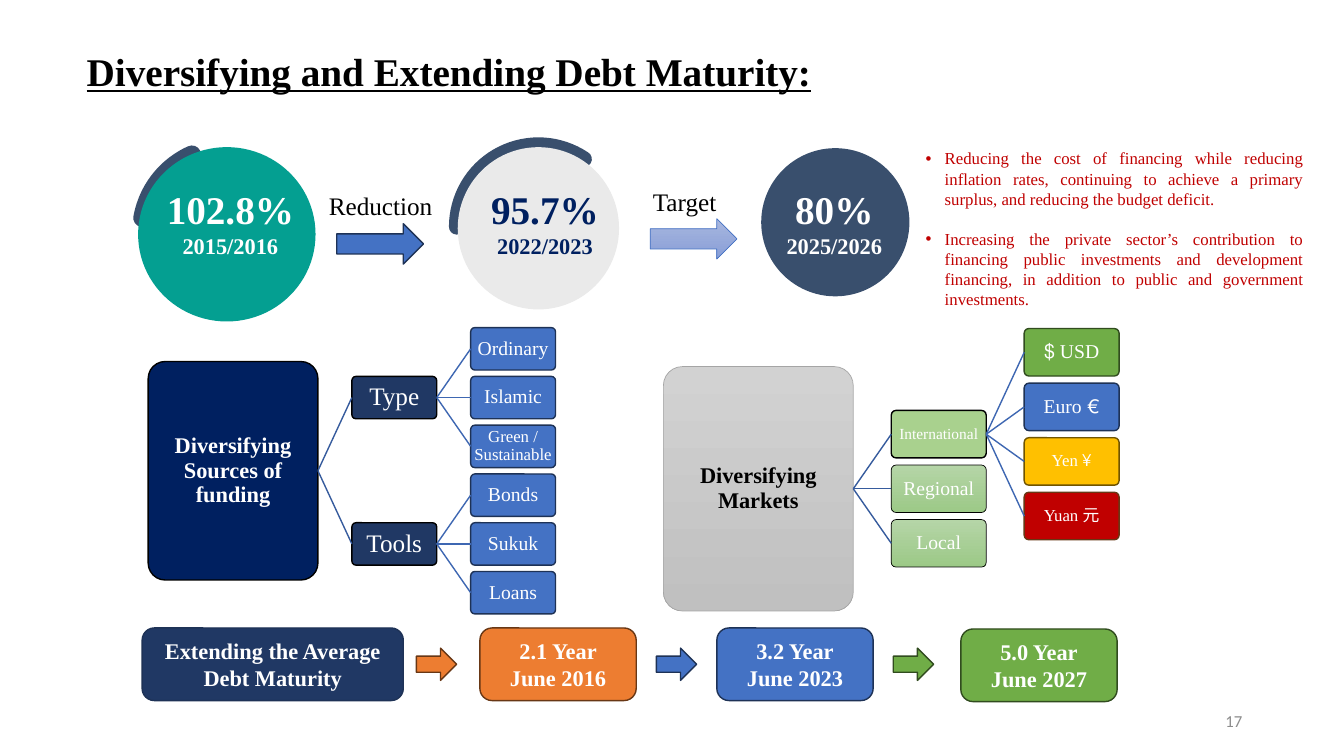
from dataclasses import dataclass

from lxml import etree
from pptx import Presentation
from pptx import util as u
from pptx.dml import color
from pptx.enum import shapes, text
from pptx.oxml import ns

COLUMNS, ROWS = 133.3, 75
WIDTH, HEIGHT = u.Inches(13.33), u.Inches(7.5)
PRESET, ALIGN, ANCHOR = shapes.MSO_SHAPE, text.PP_ALIGN, text.MSO_ANCHOR


@dataclass(frozen=True)
class Theme:
    font: str = "Times New Roman"
    number_font: str = "Calibri"
    black: str = "000000"
    white: str = "FFFFFF"
    navy: str = "002060"
    dark_blue: str = "203864"
    slate: str = "394F6D"
    teal: str = "049F91"
    pale: str = "EAEAEA"
    blue: str = "4472C4"
    blue_edge: str = "1E3256"
    orange: str = "ED7D31"
    brown_edge: str = "683715"
    green: str = "70AD47"
    green_edge: str = "314C1F"
    light_green: str = "A9D18E"
    yellow: str = "FFC000"
    yellow_edge: str = "705400"
    red: str = "C00000"
    gray: str = "8C8C8C"
    gray_edge: str = "A5A5A5"
    root_link: str = "365B9D"
    leaf_link: str = "3E67B2"
    blue_fade: tuple = ("A8B7DF", "889ED7")
    gray_fade: tuple = ("D2D2D2", "C0C0C0")
    green_fade: tuple = ("B5D5A7", "9CC987")
    headline: int = 28
    large: int = 18
    medium: int = 16
    normal: int = 14
    small: int = 12
    tiny: int = 11


T = Theme()


@dataclass(frozen=True)
class Box:
    left: float
    top: float
    width: float
    height: float

    def emu(self):
        return (round(self.left * WIDTH / COLUMNS), round(self.top * HEIGHT / ROWS),
                round(self.width * WIDTH / COLUMNS), round(self.height * HEIGHT / ROWS))

    def inner(self, left, top, width, height):
        return Box(self.left + left, self.top + top, width, height)


def rgb(value):
    return color.RGBColor.from_string(value)


def write(shape, *lines, size=T.medium, ink=T.white, bold=False, underline=False, font=T.font,
          align=ALIGN.CENTER, anchor=ANCHOR.MIDDLE, inset=None, spacing=1.0, gap=0, rtl=False):
    frame = shape.text_frame
    frame.word_wrap = True
    frame.auto_size = text.MSO_AUTO_SIZE.NONE
    frame.vertical_anchor = anchor
    if inset is not None:
        frame.margin_left = frame.margin_right = u.Inches(inset)
        frame.margin_top = frame.margin_bottom = u.Inches(inset)
    sizes = size if isinstance(size, tuple) else (size,) * len(lines)
    for index, (line, points) in enumerate(zip(lines, sizes)):
        paragraph = frame.paragraphs[0] if index == 0 else frame.add_paragraph()
        paragraph.alignment = align
        paragraph.line_spacing = spacing
        paragraph.space_before = u.Pt(gap if index else 0)
        if rtl:
            paragraph._p.get_or_add_pPr().set("rtl", "1")
        run = paragraph.add_run()
        run.text = line
        run.font.name, run.font.size = font, u.Pt(points)
        run.font.bold, run.font.underline = bold, underline
        run.font.color.rgb = rgb(ink)


def draw(slide, preset, box, fill=None, edge=None, weight=1):
    shape = slide.shapes.add_shape(preset, *box.emu())
    shape.shadow.inherit = False
    if fill is None:
        shape.fill.background()
    elif isinstance(fill, tuple):
        shape.fill.gradient()
        shape.fill.gradient_angle = 270
        for stop, value, position in zip(shape.fill.gradient_stops, fill, (0, 1)):
            stop.color.rgb, stop.position = rgb(value), position
    else:
        shape.fill.solid()
        shape.fill.fore_color.rgb = rgb(fill)
    if edge:
        shape.line.color.rgb, shape.line.width = rgb(edge), u.Pt(weight)
    else:
        shape.line.fill.background()
    return shape


def label(slide, box, *lines, **style):
    write(slide.shapes.add_textbox(*box.emu()), *lines, **style)


def place(shape, box):
    shape.left, shape.top, shape.width, shape.height = box.emu()
    return shape


def heading(slide, box):
    write(place(slide.shapes.title, box), "Diversifying and Extending Debt Maturity:",
          size=T.headline, ink=T.black, bold=True, underline=True, align=ALIGN.LEFT, spacing=0.9)


def goals(slide, box):
    body = place(slide.placeholders[1], box)
    write(body,
          "Reducing the cost of financing while reducing inflation rates, continuing to achieve "
          "a primary surplus, and reducing the budget deficit.",
          "Increasing the private sector’s contribution to financing public investments and "
          "development financing, in addition to public and government investments.",
          size=T.small, ink=T.red, align=ALIGN.JUSTIFY, anchor=ANCHOR.TOP, gap=14)
    for paragraph in body.text_frame.paragraphs:
        properties = paragraph._p.get_or_add_pPr()
        properties.set("marL", str(u.Inches(0.19)))
        properties.set("indent", str(-u.Inches(0.19)))
        etree.SubElement(properties, ns.qn("a:buFont")).set("typeface", "Arial")
        etree.SubElement(properties, ns.qn("a:buChar")).set("char", "•")


def arc(slide, box, start, end, weight):
    shape = draw(slide, PRESET.ARC, box, edge=T.slate, weight=weight)
    shape.adjustments[0], shape.adjustments[1] = start * 0.6, end * 0.6
    shape.line._get_or_add_ln().set("cap", "rnd")


def debt_ratios(slide, box):
    arc(slide, box.inner(0.3, 0.3, 17, 17), 190, 246, 12.97)
    arc(slide, box.inner(31.6, 0.1, 16.2, 16.2), 180, 304, 11.14)
    ratios = [
        (0, 0.3, 17.6, 17.3, T.teal, 1.9, "102.8%", "2015/2016", T.white),
        (31.7, 0.3, 16, 16.1, T.pale, 33.1, "95.7%", "2022/2023", T.navy),
        (61.8, 0.4, 14.7, 14.7, T.slate, 61.8, "80%", "2025/2026", T.white),
    ]
    for left, top, width, height, fill, text_left, ratio, year, ink in ratios:
        draw(slide, PRESET.OVAL, box.inner(left, top, width, height), fill)
        label(slide, box.inner(text_left, 4.1, 14.5, 11), ratio, year, bold=True, ink=ink,
              size=(T.headline, T.medium), inset=0, anchor=ANCHOR.TOP)
    steps = [
        ("Reduction", 17.8, 4.1, 12.5, 19.7, 7.9, T.blue, T.blue_edge, 1),
        ("Target", 49, 3.7, 10.4, 50.8, 7.4, T.blue_fade, T.blue, 0.5),
    ]
    for name, left, top, width, arrow_left, arrow_top, fill, edge, weight in steps:
        draw(slide, PRESET.RIGHT_ARROW, box.inner(arrow_left, arrow_top, 8.6, 4), fill, edge, weight)
        label(slide, box.inner(left, top, width, 4), name, size=T.large, ink=T.black)


def link(slide, parent, child, ink):
    connector = slide.shapes.add_connector(shapes.MSO_CONNECTOR.STRAIGHT, 0, 0, 0, 0)
    connector.begin_connect(parent, 3)
    connector.end_connect(child, 1)
    connector.line.color.rgb, connector.line.width = rgb(ink), u.Pt(1)
    etree.SubElement(connector._element.spPr, ns.qn("a:effectLst"))


def tree(slide, box, root, branches):
    unit = box.width / 4.8

    def node(column, row, content, width=1, height=0.5, bold=False, ink=T.white):
        name, size, fill, edge, weight = content
        middle = 0.25 + row * 0.575
        area = box.inner(column * unit, (middle - height / 2) * unit, width * unit, height * unit)
        shape = draw(slide, PRESET.ROUNDED_RECTANGLE, area, fill, edge, weight)
        shape.adjustments[0] = 0.1
        write(shape, name, size=size, ink=ink, bold=bold, inset=0.01, spacing=0.9, rtl=True)
        return shape

    next_row, placed = 0, []
    for content, leaves in branches:
        rows = [next_row + index for index in range(len(leaves))]
        row = sum(rows) / len(rows) if rows else placed[-1][0] + 1
        next_row += len(leaves)
        branch = node(2.4, row, content)
        placed.append((row, branch))
        for leaf_row, leaf in zip(rows, leaves):
            link(slide, branch, node(3.8, leaf_row, leaf), T.leaf_link)
    content, ink = root
    center = sum(row for row, _ in placed) / len(placed)
    trunk = node(0, center, content, 2, 2.575, True, ink)
    for _, branch in placed:
        link(slide, trunk, branch, T.root_link)


def funding_sources(slide, box):
    def leaf(name, size=T.normal):
        return name, size, T.blue, T.blue_edge, 1

    tree(slide, box,
         (("Diversifying Sources of funding", T.medium, T.navy, T.black, 1), T.white),
         [(("Type", T.large, T.dark_blue, T.black, 1),
           [leaf("Ordinary"), leaf("Islamic"), leaf("Green / Sustainable", T.small)]),
          (("Tools", T.large, T.dark_blue, T.black, 1),
           [leaf("Bonds"), leaf("Sukuk"), leaf("Loans")])])


def markets(slide, box):
    currencies = [
        ("USD $", T.normal, T.green, T.green_edge, 1),
        ("€ Euro", T.normal, T.blue, T.blue_edge, 1),
        ("¥ Yen", T.small, T.yellow, T.yellow_edge, 1),
        ("Yuan 元", T.small, T.red, T.brown_edge, 1),
    ]
    tree(slide, box,
         (("Diversifying Markets", T.medium, T.gray_fade, T.gray_edge, 0.5), T.black),
         [(("International", T.tiny, T.light_green, T.black, 1), currencies),
          (("Regional", T.normal, T.green_fade, T.black, 0.5), []),
          (("Local", T.normal, T.green_fade, T.black, 0.5), [])])


def maturity_timeline(slide, box):
    def card(left, top, width, fill, edge, *lines):
        area = box.inner(left, top, width, box.height)
        write(draw(slide, PRESET.ROUNDED_RECTANGLE, area, fill, edge), *lines, bold=True)

    card(0, 0, 25.9, T.dark_blue, T.blue_edge, "Extending the Average Debt Maturity")
    stages = [
        (27.2, 33.5, 0, T.orange, T.brown_edge, "2.1 Year", "June 2016"),
        (51, 57, 0, T.blue, T.blue_edge, "3.2 Year", "June 2023"),
        (74.5, 81.2, 0.1, T.green, T.green_edge, "5.0 Year", "June 2027"),
    ]
    for arrow_left, left, top, fill, edge, years, date in stages:
        draw(slide, PRESET.RIGHT_ARROW, box.inner(arrow_left, 2, 4, 3.2), fill, edge)
        card(left, top, 15.5, fill, edge, years, date)


def main():
    presentation = Presentation()
    presentation.slide_width, presentation.slide_height = WIDTH, HEIGHT
    slide = presentation.slides.add_slide(presentation.slide_layouts[1])
    heading(slide, Box(7.6, 0.1, 115, 14.5))
    debt_ratios(slide, Box(13.7, 14.3, 76.5, 17.6))
    goals(slide, Box(90.8, 14.2, 39.5, 17.2))
    funding_sources(slide, Box(14.7, 32.5, 40.4, 28.4))
    markets(slide, Box(65.8, 32.6, 45.2, 28))
    maturity_timeline(slide, Box(14.1, 62.3, 96.7, 7.2))
    label(slide, Box(94.2, 69.5, 30, 4), "17", size=T.small, ink=T.gray,
          font=T.number_font, align=ALIGN.RIGHT)
    presentation.save("out.pptx")


if __name__ == "__main__":
    main()
